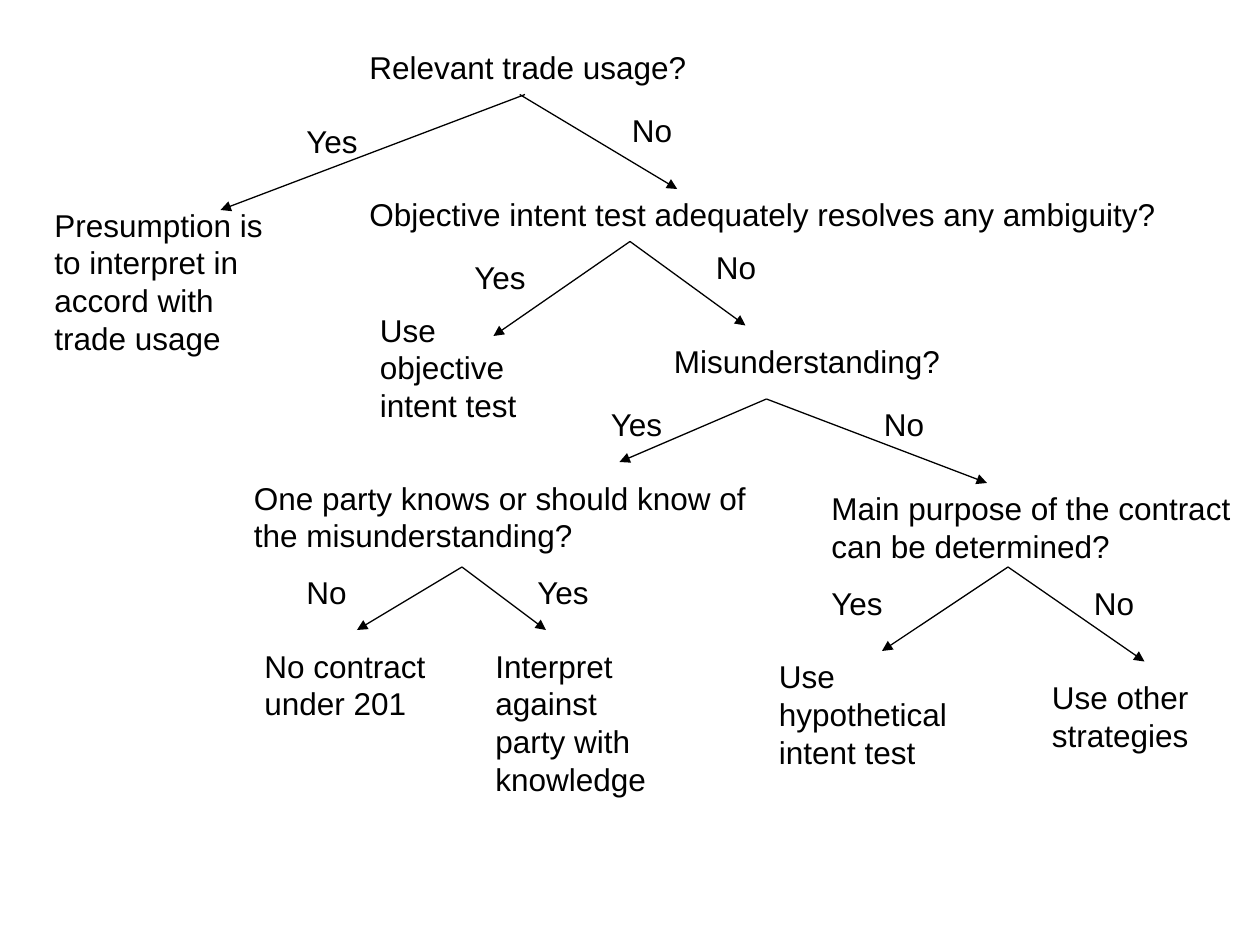
from lxml import etree
from pptx import Presentation
from pptx import util as u
from pptx.dml.color import RGBColor
from pptx.enum import shapes, text
from pptx.oxml.ns import qn

COLORS = {"ink": "000000", "page": "FFFFFF"}
CELL = u.Inches(1) / 12  # 120 columns by 90 rows

# wording, column, row, columns wide, lines of text
NODES = [
    ("Relevant trade usage?", 34, 4, 34, 1),
    ("Presumption is to interpret in accord with trade usage", 4, 19, 23, 4),
    ("Objective intent test adequately resolves any ambiguity?", 34, 18, 83, 1),
    ("Use objective intent test", 35, 29, 20, 3),
    ("Misunderstanding?", 63, 32, 32, 1),
    ("One party knows or should know of the misunderstanding?", 23, 45, 50, 2),
    ("No contract under 201", 24, 61, 18, 2),
    ("Interpret against party with knowledge", 46, 61, 18, 4),
    ("Main purpose of the contract can be determined?", 78, 46, 42, 2),
    ("Use hypothetical intent test", 73, 62, 22, 3),
    ("Use other strategies", 99, 64, 18, 2),
]

# start of the arrow, its tip, answer, corner of the answer
BRANCHES = [
    ((50, 9), (21, 20), "Yes", (28, 11)),
    ((49.5, 9), (64.5, 18), "No", (59, 10)),
    ((60, 23), (47, 32), "Yes", (44, 24)),
    ((60, 23), (71, 31), "No", (67, 23)),
    ((73, 38), (59, 44), "Yes", (57, 38)),
    ((73, 38), (94, 46), "No", (83, 38)),
    ((44, 54), (34, 60), "No", (28, 54)),
    ((44, 54), (52, 60), "Yes", (50, 54)),
    ((96, 54), (84, 62), "Yes", (78, 55)),
    ((96, 54), (109, 63), "No", (103, 55)),
]
WIDTHS = {"Yes": 12, "No": 8}


def cells(*counts):
    return [u.Emu(round(n * CELL)) for n in counts]


def rgb(name):
    return RGBColor.from_string(COLORS[name])


def label(slide, words, col, row, wide, lines=1, size=18, font="Arial", color="ink"):
    x, y, w = cells(col, row, wide)
    box = slide.shapes.add_textbox(x, y, w, u.Inches(0.1 + 0.3 * lines))
    frame = box.text_frame
    frame.word_wrap = True
    frame.auto_size = text.MSO_AUTO_SIZE.SHAPE_TO_FIT_TEXT
    run = frame.paragraphs[0].add_run()
    run.text = words
    run.font.size = u.Pt(size)
    run.font.name = font
    run.font.color.rgb = rgb(color)


def arrow(slide, start, tip):
    line = slide.shapes.add_connector(
        shapes.MSO_CONNECTOR.STRAIGHT, *cells(*start, *tip))
    line.line.color.rgb = rgb("ink")
    line.line.width = u.Pt(0.75)
    etree.SubElement(line.line._get_or_add_ln(), qn("a:tailEnd"), type="triangle")
    etree.SubElement(line._element.spPr, qn("a:effectLst"))


def main():
    deck = Presentation()
    deck.slide_width, deck.slide_height = cells(120, 90)
    slide = deck.slides.add_slide(deck.slide_layouts[6])
    slide.background.fill.solid()
    slide.background.fill.fore_color.rgb = rgb("page")
    for start, tip, answer, corner in BRANCHES:
        arrow(slide, start, tip)
        label(slide, answer, *corner, WIDTHS[answer])
    for node in NODES:
        label(slide, *node)
    deck.save("out.pptx")


if __name__ == "__main__":
    main()
